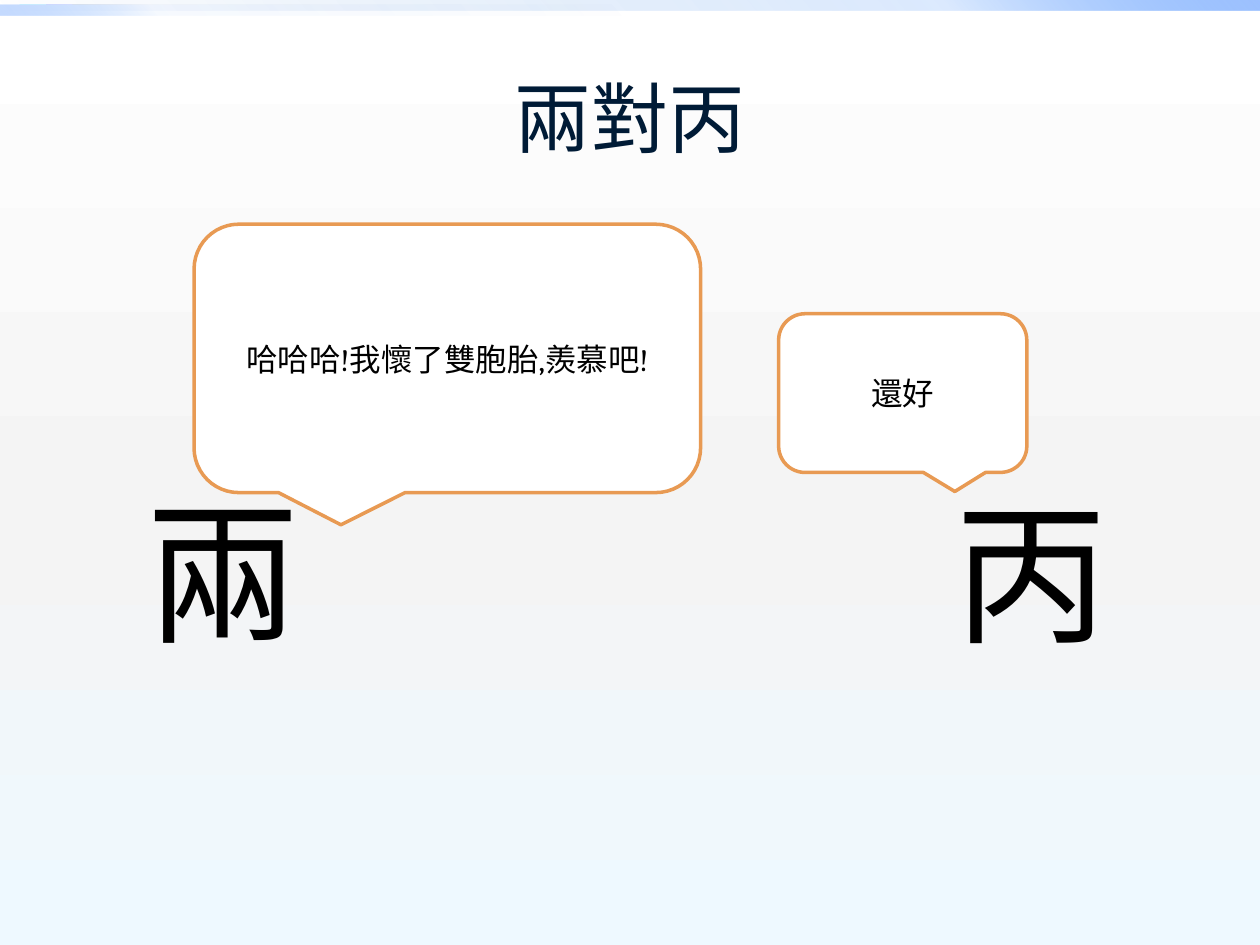
from dataclasses import dataclass

from lxml.etree import SubElement
from pptx import Presentation
from pptx.dml.color import RGBColor
from pptx.enum.shapes import MSO_SHAPE
from pptx.enum.text import MSO_ANCHOR, PP_ALIGN
from pptx.oxml.ns import qn
from pptx.util import Inches, Pt


@dataclass(frozen=True)
class Theme:
    navy: str = "001B36"
    black: str = "000000"
    white: str = "FFFFFF"
    orange: str = "E89A53"
    head: str = "Calibri"
    body: str = "Cambria"
    title: int = 44
    glyph: int = 88
    talk: int = 18
    edge: int = 2
    sky: tuple = ((0, "FFFFFF", 100), (55, "F4F4F4", 100), (100, "EEF9FF", 100))
    wide: tuple = ((0, "0058B7", 0), (75, "4F95FF", 20), (100, "9EC2FF", 100))
    half: tuple = ((0, "0058B7", 0), (75, "4F95FF", 5), (100, "9EC2FF", 60))


THEME = Theme()


def set_fade(fill, root, stops, angle):
    """Give fill a gradient of (position, colour, opacity) stops, in percent.

    The angle runs clockwise; root is the element that holds the fill.
    """
    fill.gradient()
    fill.gradient_angle = (360 - angle) % 360
    items = next(root.iter(qn("a:gsLst")))
    for old in list(items):
        items.remove(old)
    for place, color, alpha in stops:
        stop = SubElement(items, qn("a:gs"), pos=str(place * 1000))
        tone = SubElement(stop, qn("a:srgbClr"), val=color)
        if alpha < 100:
            SubElement(tone, qn("a:alpha"), val=str(alpha * 1000))


def set_text(shape, text, font, size, color):
    frame = shape.text_frame
    frame.text = text
    frame.word_wrap = True
    frame.vertical_anchor = MSO_ANCHOR.MIDDLE
    para = frame.paragraphs[0]
    para.alignment = PP_ALIGN.CENTER
    style = para.runs[0].font
    style.name = font
    style.size = Pt(size)
    style.color.rgb = RGBColor.from_string(color)


def add_band(slide, top, width, stops, angle):
    band = slide.shapes.add_shape(
        MSO_SHAPE.RECTANGLE, 0, Inches(top), Inches(width), Inches(0.08))
    band.shadow.inherit = False
    band.line.fill.background()
    set_fade(band.fill, band.element, stops, angle)


def add_title(slide, text):
    title = slide.shapes.title
    title.left, title.top = Inches(0.5), Inches(0.3)
    title.width, title.height = Inches(9), Inches(1.25)
    set_text(title, text, THEME.head, THEME.title, THEME.navy)


def add_glyph(slide, text, center):
    width = 1.6
    box = slide.shapes.add_textbox(
        Inches(center - width / 2), Inches(3.62), Inches(width), Inches(1.8))
    set_text(box, text, THEME.body, THEME.glyph, THEME.black)


def add_bubble(slide, text, area, lean):
    """Add a speech bubble; lean is the tip's offset as a share of the width."""
    bubble = slide.shapes.add_shape(
        MSO_SHAPE.ROUNDED_RECTANGULAR_CALLOUT, *map(Inches, area))
    bubble.shadow.inherit = False
    bubble.adjustments[0] = lean
    bubble.adjustments[1] = 0.62
    bubble.fill.solid()
    bubble.fill.fore_color.rgb = RGBColor.from_string(THEME.white)
    bubble.line.color.rgb = RGBColor.from_string(THEME.orange)
    bubble.line.width = Pt(THEME.edge)
    set_text(bubble, text, THEME.body, THEME.talk, THEME.black)


def main():
    deck = Presentation()
    deck.slide_width, deck.slide_height = Inches(10), Inches(7.5)
    slide = deck.slides.add_slide(deck.slide_layouts[5])
    set_fade(slide.background.fill, slide.element, THEME.sky, 90)
    add_band(slide, 0, 10, THEME.wide, 315)
    add_band(slide, 0.04, 5, THEME.half, 135)
    add_title(slide, "兩對丙")
    add_glyph(slide, "兩", 1.77)
    add_glyph(slide, "丙", 8.19)
    add_bubble(slide, "哈哈哈!我懷了雙胞胎,羨慕吧!", (1.54, 1.78, 4.02, 2.13), -0.21)
    add_bubble(slide, "還好", (6.18, 2.49, 1.97, 1.26), 0.21)
    deck.save("out.pptx")


if __name__ == "__main__":
    main()
